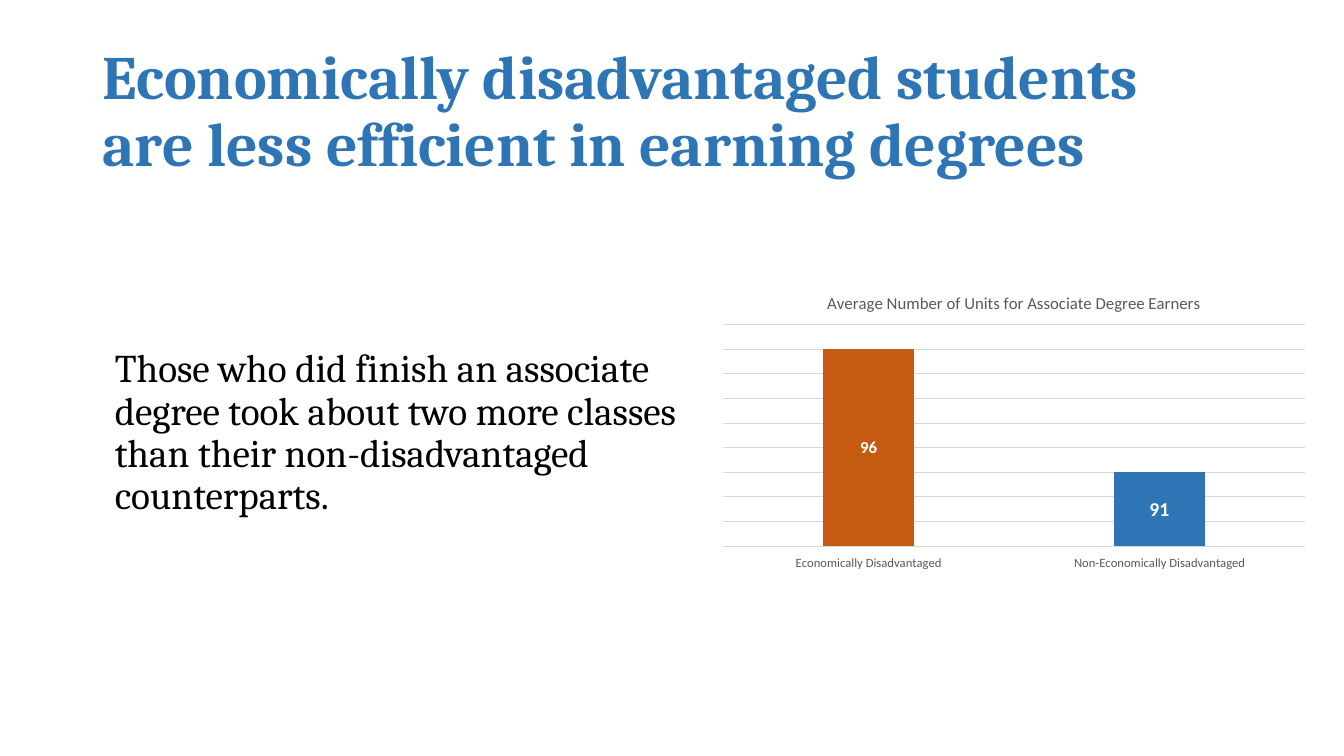
from dataclasses import dataclass

from pptx import Presentation
from pptx.chart.data import CategoryChartData
from pptx.dml.color import RGBColor as Rgb
from pptx.enum.chart import XL_CHART_TYPE as ChartType
from pptx.enum.chart import XL_LABEL_POSITION as LabelPosition
from pptx.enum.chart import XL_TICK_LABEL_POSITION as TickLabels
from pptx.enum.chart import XL_TICK_MARK as TickMark
from pptx.enum.text import MSO_ANCHOR as Anchor
from pptx.util import Inches, Pt


@dataclass(frozen=True)
class Theme:
    serif: str = "Cambria"
    sans: str = "Calibri"
    blue: str = "2E75B6"
    orange: str = "C55A11"
    ink: str = "000000"
    grey: str = "595959"
    rule: str = "D9D9D9"
    white: str = "FFFFFF"
    title_size: int = 44
    body_size: int = 28
    chart_title_size: int = 12
    chart_size: int = 10
    category_size: int = 9
    rule_width: float = 0.75


THEME = Theme()
WIDTH, HEIGHT = Inches(13.33), Inches(7.5)
TITLE_AREA = (0.069, 0.053, 0.863, 0.193)
BODY_AREA = (0.078, 0.455, 0.47, 0.513)
CHART_AREA = (0.529, 0.367, 0.451, 0.396)
UNITS = (
    ("Economically Disadvantaged", 96, THEME.orange, 12),
    ("Non-Economically Disadvantaged", 91, THEME.blue, 14),
)


def place(area):
    left, top, width, height = area
    return [round(share * length) for share, length in
            ((left, WIDTH), (top, HEIGHT), (width, WIDTH), (height, HEIGHT))]


def style_font(font, name, size, color, bold=False):
    font.name = name
    font.size = Pt(size)
    font.bold = bold
    font.color.rgb = Rgb.from_string(color)


def style_rule(line):
    line.color.rgb = Rgb.from_string(THEME.rule)
    line.width = Pt(THEME.rule_width)


def add_text(page, area, text, size, color, bold=False, anchor=Anchor.TOP, before=0):
    frame = page.shapes.add_textbox(*place(area)).text_frame
    frame.word_wrap = True
    frame.vertical_anchor = anchor
    frame.text = text
    para = frame.paragraphs[0]
    para.line_spacing = 0.9
    para.space_before = Pt(before)
    for span in para.runs:
        style_font(span.font, THEME.serif, size, color, bold)


def style_title(chart, text):
    chart.has_title = True
    chart.chart_title.include_in_layout = False
    para = chart.chart_title.text_frame.paragraphs[0]
    para.text = text
    for span in para.runs:
        style_font(span.font, THEME.sans, THEME.chart_title_size, THEME.grey)


def style_axes(chart):
    categories = chart.category_axis
    categories.major_tick_mark = TickMark.NONE
    categories.minor_tick_mark = TickMark.NONE
    categories.tick_label_position = TickLabels.LOW
    style_font(categories.tick_labels.font, THEME.sans, THEME.category_size, THEME.grey)
    style_rule(categories.format.line)
    values = chart.value_axis
    values.visible = False
    values.minimum_scale, values.maximum_scale, values.major_unit = 88, 97, 1
    values.has_major_gridlines = True
    style_rule(values.major_gridlines.format.line)


def style_columns(plot):
    plot.gap_width = 219
    plot.overlap = -27
    plot.vary_by_categories = False
    for index, (_, _, color, label_size) in enumerate(UNITS):
        point = plot.series[0].points[index]
        point.format.fill.solid()
        point.format.fill.fore_color.rgb = Rgb.from_string(color)
        label = point.data_label
        style_font(label.font, THEME.sans, label_size, THEME.white, True)
        label.position = LabelPosition.CENTER


def add_units_chart(page, area, title):
    data = CategoryChartData()
    data.categories = [name for name, *_ in UNITS]
    data.add_series("Series 1", [units for _, units, *_ in UNITS])
    chart = page.shapes.add_chart(ChartType.COLUMN_CLUSTERED, *place(area), data).chart
    chart.has_legend = False
    style_font(chart.font, THEME.sans, THEME.chart_size, THEME.ink)
    style_title(chart, title)
    style_axes(chart)
    style_columns(chart.plots[0])


def main():
    deck = Presentation()
    deck.slide_width, deck.slide_height = WIDTH, HEIGHT
    page = deck.slides.add_slide(deck.slide_layouts[6])
    add_text(page, TITLE_AREA,
             "Economically disadvantaged students are less efficient in earning degrees",
             THEME.title_size, THEME.blue, bold=True, anchor=Anchor.MIDDLE)
    add_text(page, BODY_AREA,
             "Those who did finish an associate degree took about two more classes "
             "than their non-disadvantaged counterparts.",
             THEME.body_size, THEME.ink, before=10)
    add_units_chart(page, CHART_AREA, "Average Number of Units for Associate Degree Earners")
    deck.save("out.pptx")


if __name__ == "__main__":
    main()
